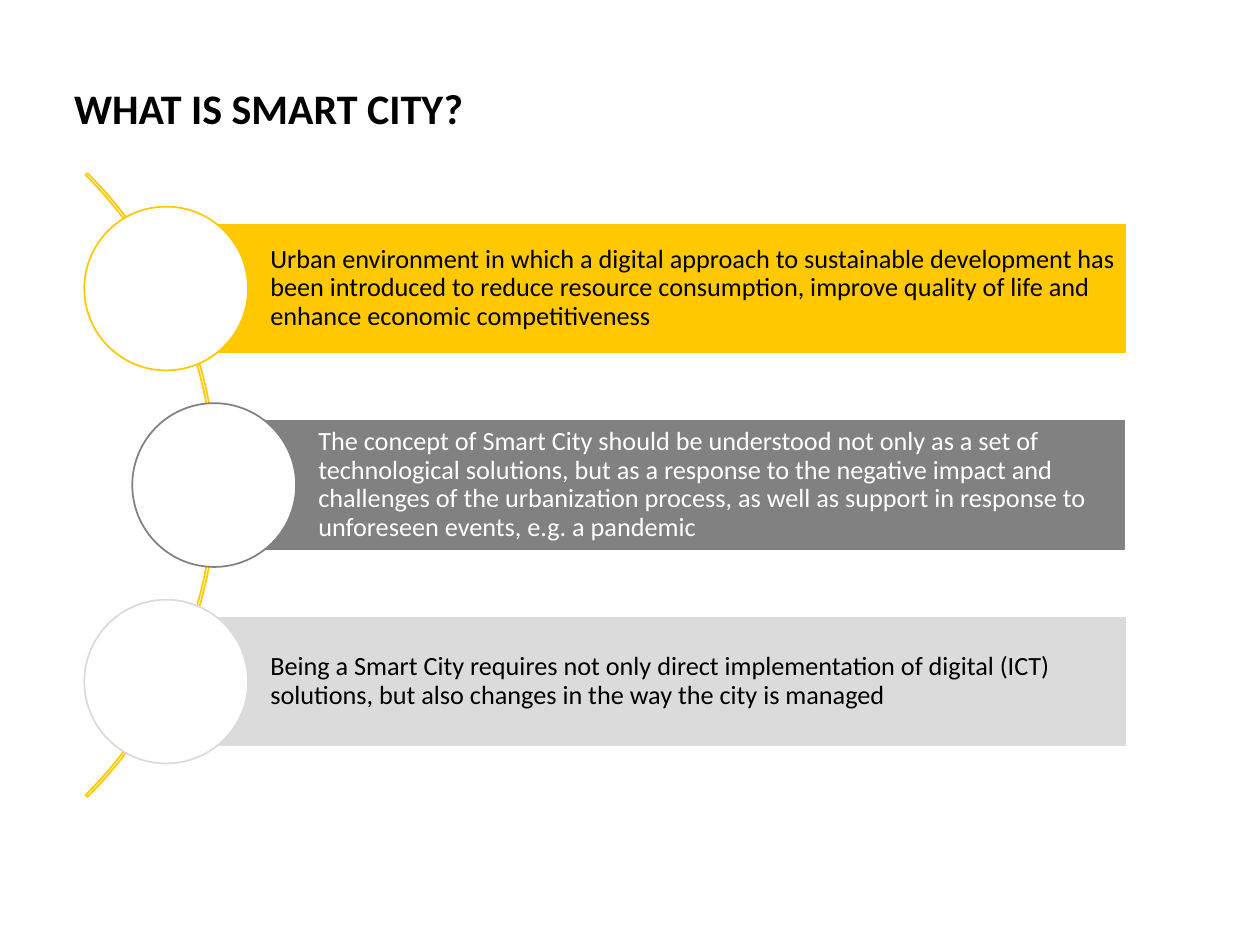
import pptx
import pptx.dml.color
import pptx.enum.shapes
import pptx.enum.text
import pptx.util

Pt = pptx.util.Pt
SHAPES = pptx.enum.shapes.MSO_SHAPE
ANCHORS = pptx.enum.text.MSO_ANCHOR
ALIGNMENTS = pptx.enum.text.PP_ALIGN

COLOURS = {
    "black": "000000",
    "white": "FFFFFF",
    "yellow": "FFC800",
    "grey": "818181",
    "silver": "DBDBDB",
}

STATEMENTS = [
    (95, "yellow", "black",
     "Urban environment in which a digital approach to sustainable development has been "
     "introduced to reduce resource consumption, improve quality of life and enhance "
     "economic competitiveness"),
    (122.4, "grey", "white",
     "The concept of Smart City should be understood not only as a set of technological "
     "solutions, but as a response to the negative impact and challenges of the "
     "urbanization process, as well as support in response to unforeseen events, "
     "e.g. a pandemic"),
    (95, "silver", "black",
     "Being a Smart City requires not only direct implementation of digital (ICT) "
     "solutions, but also changes in the way the city is managed"),
]


def apply(target, values):
    for name, value in values.items():
        setattr(target, name, value)


class SlideBuilder:
    font_name = "Calibri"
    line_width = 1

    def __init__(self, slide):
        self.slide = slide

    def colour(self, name):
        return pptx.dml.color.RGBColor.from_string(COLOURS[name])

    def set_text(self, shape, text, size, colour, spacing, insets, anchor, bold=False):
        frame = shape.text_frame
        margins = ("margin_left", "margin_top", "margin_right", "margin_bottom")
        apply(frame, {"word_wrap": True, "vertical_anchor": anchor})
        apply(frame, {name: Pt(inset) for name, inset in zip(margins, insets)})
        paragraph = frame.paragraphs[0]
        apply(paragraph, {"text": text, "line_spacing": spacing, "alignment": ALIGNMENTS.LEFT})
        font = paragraph.runs[0].font
        apply(font, {"name": self.font_name, "size": Pt(size), "bold": bold})
        font.color.rgb = self.colour(colour)

    def title(self, text, left, top, width, height):
        box = self.slide.shapes.add_textbox(Pt(left), Pt(top), Pt(width), Pt(height))
        self.set_text(box, text, 24, "black", 1.13, (7.2, 3.6, 7.2, 3.6), ANCHORS.TOP, True)

    def shape(self, kind, left, top, width, height, line, fill=None):
        shape = self.slide.shapes.add_shape(kind, Pt(left), Pt(top), Pt(width), Pt(height))
        shape.shadow.inherit = False
        if fill:
            shape.fill.solid()
            shape.fill.fore_color.rgb = self.colour(fill)
        else:
            shape.fill.background()
        shape.line.color.rgb = self.colour(line)
        shape.line.width = Pt(self.line_width)
        return shape

    def arc(self, left, centre, diameter, thickness, colour):
        arc = self.shape(SHAPES.BLOCK_ARC, left, centre - diameter / 2,
                         diameter, diameter, colour)
        for index, value in enumerate((189, 27, thickness / diameter)):
            arc.adjustments[index] = value

    def bar(self, left, right, centre, height, fill, text, text_colour):
        bar = self.shape(SHAPES.RECTANGLE, left, centre - height / 2,
                         right - left, height, "white", fill)
        self.set_text(bar, text, 15, text_colour, 0.9, (59.5, 2.9, 2.9, 2.9), ANCHORS.MIDDLE)

    def circle(self, middle, centre, diameter, line):
        self.shape(SHAPES.OVAL, middle - diameter / 2, centre - diameter / 2,
                   diameter, diameter, line, "white")


def main():
    presentation = pptx.Presentation()
    apply(presentation, {"slide_width": Pt(720), "slide_height": Pt(540)})
    builder = SlideBuilder(presentation.slides.add_slide(presentation.slide_layouts[6]))

    middle, step = 277.2, 112.3
    builder.title("WHAT IS SMART CITY?", 35.3, 39.6, 665, 36.7)
    builder.arc(-380.2, middle, 504, 1.5, "yellow")
    for row, (left, colour, text_colour, text) in enumerate(STATEMENTS):
        centre = middle + (row - 1) * step
        builder.bar(left, 643.7, centre, 74.9, colour, text, text_colour)
        builder.circle(left, centre, 93.6, colour)

    presentation.save("out.pptx")


if __name__ == "__main__":
    main()
